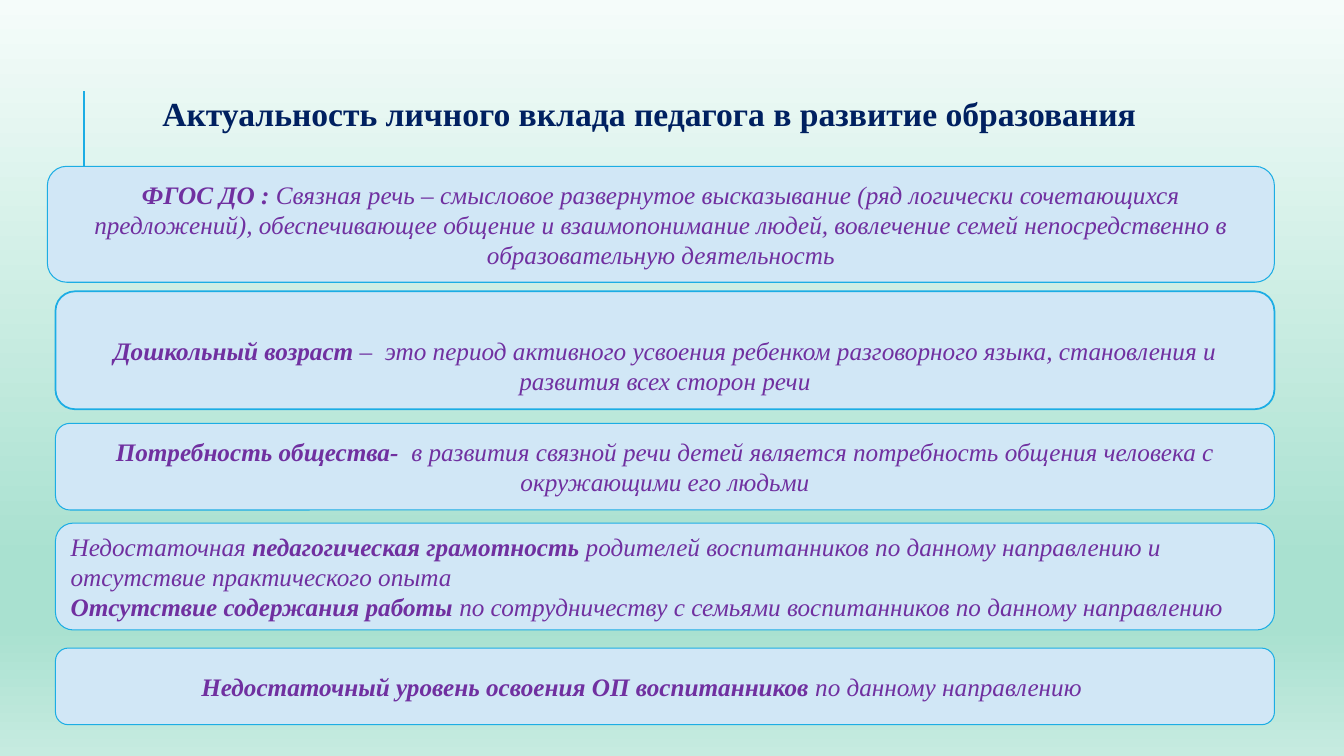
"""Build the slide on the relevance of the teacher's personal contribution."""
from lxml import etree
from pptx import Presentation
from pptx.dml.color import RGBColor
from pptx.enum import shapes, text
from pptx.oxml.ns import qn
from pptx.util import Inches, Pt

COLORS = {"title": "002060", "body": "7030A0", "panel": "D1E7F6", "accent": "1CADE4"}
BACKGROUND = [(0, "F5FCFA"), (74, "A9E1D0"), (83, "A9E1D0"), (100, "C6EBE0")]
FONT = "Times New Roman"
CENTER, LEFT = text.PP_ALIGN.CENTER, text.PP_ALIGN.LEFT

TITLE = [[("Актуальность личного вклада педагога в развитие образования", True)]]
RIGHT_EDGE = 12.64
PANELS = [
    dict(left=0.47, top=1.65, height=1.15, paragraphs=[[
        ("ФГОС ДО : ", True),
        ("Связная речь – смысловое развернутое высказывание (ряд логически сочетающихся "
         "предложений), обеспечивающее общение и взаимопонимание людей, вовлечение семей "
         "непосредственно в образовательную деятельность", False)]]),
    dict(top=2.89, height=1.17, border=1.25, inset_top=0.35, paragraphs=[[
        ("Дошкольный возраст ", True),
        ("–  это период активного усвоения ребенком разговорного языка, становления и "
         "развития всех сторон речи", False)]]),
    dict(top=4.2, height=0.86, paragraphs=[[
        ("Потребность общества-  ", True),
        ("в развития связной речи детей является потребность общения человека с "
         "окружающими его людьми", False)]]),
    dict(top=5.19, height=1.06, align=LEFT, paragraphs=[
        [("Недостаточная ", False),
         ("педагогическая грамотность ", True),
         ("родителей воспитанников по данному направлению и отсутствие практического "
          "опыта", False)],
        [("Отсутствие содержания работы ", True),
         ("по сотрудничеству с семьями воспитанников по данному направлению", False)]]),
    dict(top=6.43, height=0.76, align=LEFT, inset_left=1.41, paragraphs=[[
        ("Недостаточный уровень освоения ОП воспитанников ", True),
        ("по данному направлению", False)]]),
]


def write(frame, paragraphs, *, size=18, color="body", italic=True, align=CENTER,
          anchor=text.MSO_ANCHOR.MIDDLE, inset_left=0.1, inset_top=0.05):
    frame.word_wrap = True
    frame.vertical_anchor = anchor
    frame.margin_left, frame.margin_top = Inches(inset_left), Inches(inset_top)
    for index, parts in enumerate(paragraphs):
        paragraph = frame.add_paragraph() if index else frame.paragraphs[0]
        paragraph.alignment = align
        for words, bold in parts:
            run = paragraph.add_run()
            run.text = words
            run.font.name, run.font.size = FONT, Pt(size)
            run.font.bold, run.font.italic = bold, italic
            run.font.color.rgb = RGBColor.from_string(COLORS[color])


def paint_background(slide):
    fill = slide.background.fill
    fill.gradient()
    fill.gradient_angle = 270
    stops = slide.element.find(".//" + qn("a:gsLst"))
    for stop in list(stops):
        stops.remove(stop)
    for percent, color in BACKGROUND:
        stop = etree.SubElement(stops, qn("a:gs"), pos=str(percent * 1000))
        etree.SubElement(stop, qn("a:srgbClr"), val=color)


def add_rule(slide):
    rule = slide.shapes.add_connector(shapes.MSO_CONNECTOR.STRAIGHT, Inches(0.83),
                                      Inches(1.9), Inches(0.83), Inches(0.9))
    rule.line.color.rgb = RGBColor.from_string(COLORS["accent"])
    rule.line.width = Pt(1.5)
    etree.SubElement(rule._element.spPr, qn("a:effectLst"))


def add_panel(slide, paragraphs, *, top, height, left=0.55, border=0.75, **style):
    panel = slide.shapes.add_shape(shapes.MSO_SHAPE.ROUNDED_RECTANGLE, Inches(left),
                                   Inches(top), Inches(RIGHT_EDGE - left), Inches(height))
    panel.shadow.inherit = False
    panel.fill.solid()
    panel.fill.fore_color.rgb = RGBColor.from_string(COLORS["panel"])
    panel.line.color.rgb = RGBColor.from_string(COLORS["accent"])
    panel.line.width = Pt(border)
    write(panel.text_frame, paragraphs, **style)


def main():
    deck = Presentation()
    deck.slide_width, deck.slide_height = Inches(13.33), Inches(7.5)
    slide = deck.slides.add_slide(deck.slide_layouts[6])
    paint_background(slide)
    add_rule(slide)
    title = slide.shapes.add_textbox(Inches(0.76), Inches(0.87), Inches(11.6), Inches(0.5))
    write(title.text_frame, TITLE, size=24, color="title", italic=False, align=LEFT,
          anchor=text.MSO_ANCHOR.TOP, inset_left=0.85)
    for panel in PANELS:
        add_panel(slide, **panel)
    deck.save("out.pptx")


if __name__ == "__main__":
    main()
